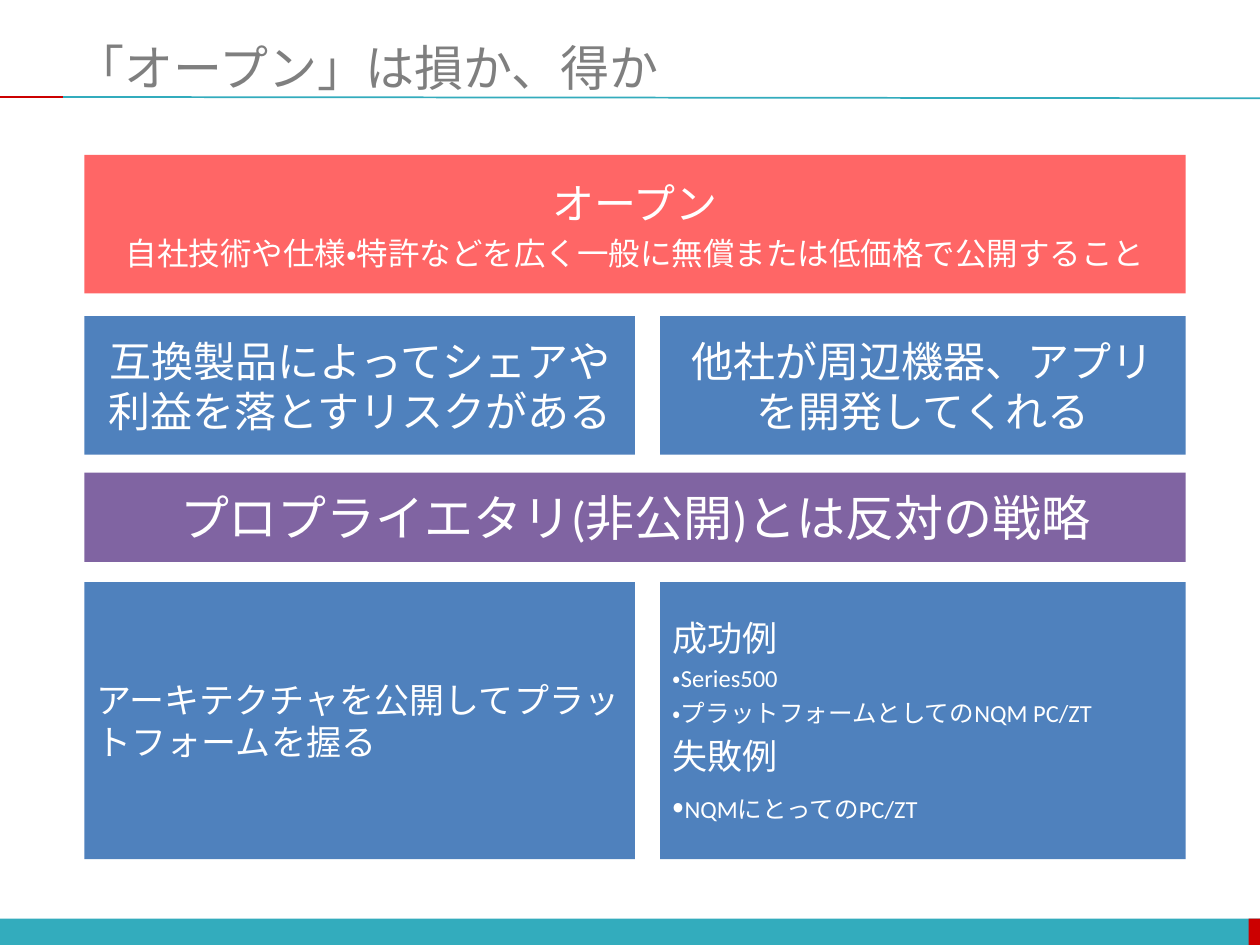
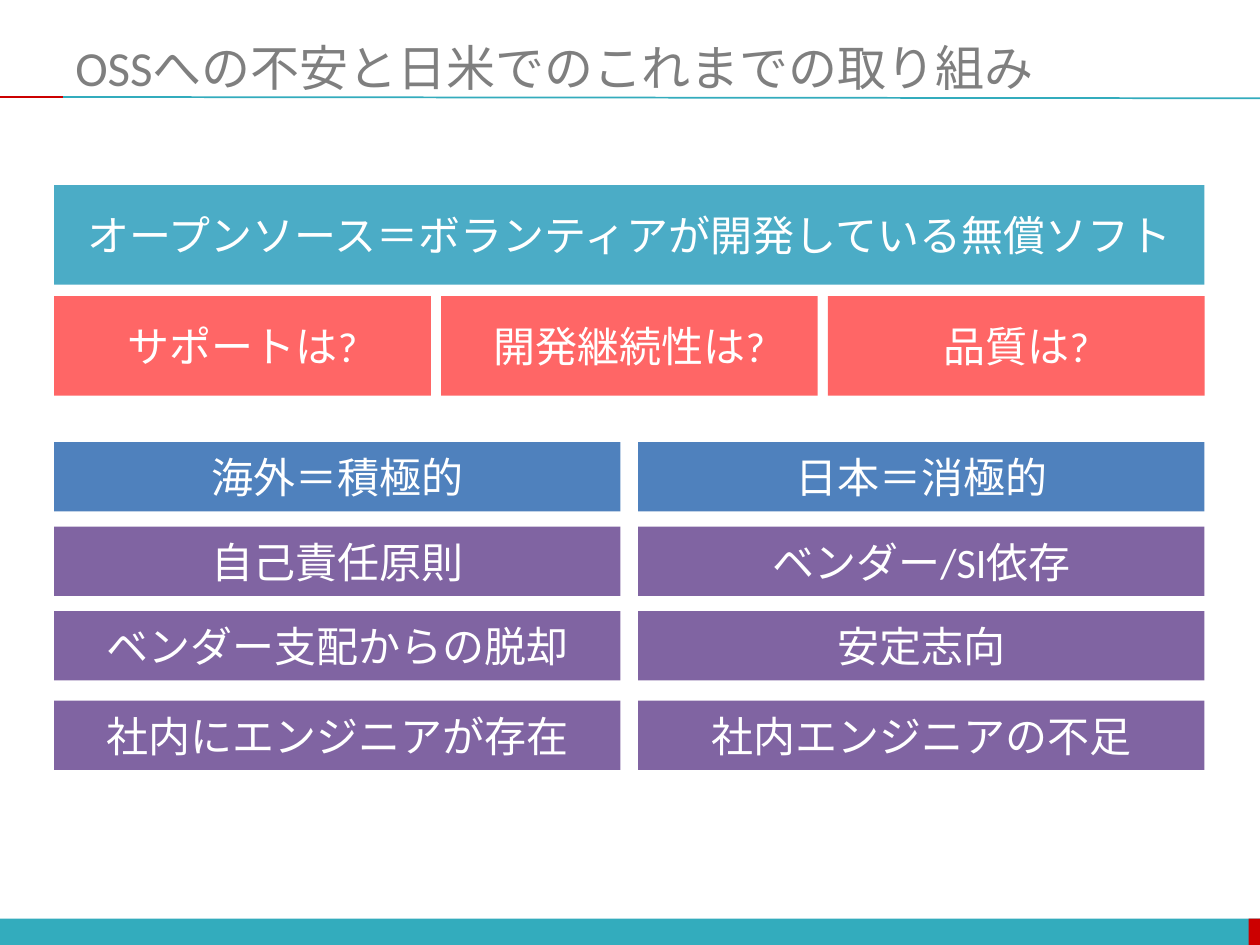
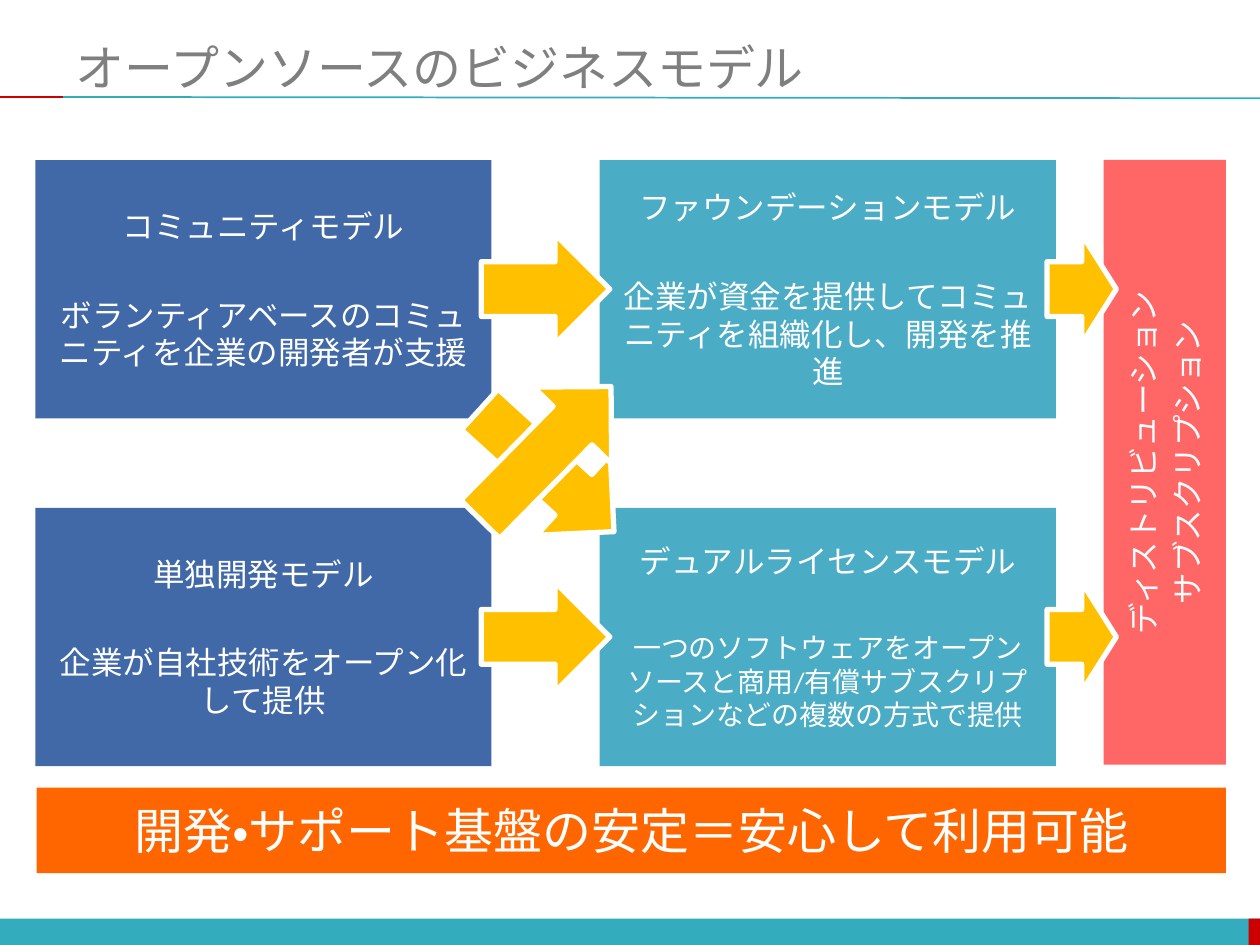
from pptx import Presentation
from pptx.dml.color import RGBColor
from pptx.enum.lang import MSO_LANGUAGE_ID
from pptx.enum.shapes import MSO_CONNECTOR, MSO_SHAPE
from pptx.enum.text import MSO_ANCHOR, PP_ALIGN
from pptx.oxml.ns import qn
from pptx.util import Inches, Pt

RECTANGLE, ARROW = MSO_SHAPE.RECTANGLE, MSO_SHAPE.RIGHT_ARROW
LEFT, CENTER = PP_ALIGN.LEFT, PP_ALIGN.CENTER
MIDDLE = MSO_ANCHOR.MIDDLE
JAPANESE = MSO_LANGUAGE_ID.JAPANESE
STRAIGHT = MSO_CONNECTOR.STRAIGHT

WIDTH, HEIGHT = 10, 7.5
FONT, BANNER_FONT = "Calibri", "Noto Sans CJK JP"
COLORS = {
    "teal": "33ACBD", "red": "CC0000", "title": "7F7F7F", "white": "FFFFFF",
    "blue": "4F81BD", "navy": "4168A7", "aqua": "4BACC6", "purple": "8064A2",
    "coral": "FF6666", "orange": "FF6600", "gold": "FFC000",
}

# Content: a paragraph is a list of (text, size) runs
OPEN_TITLE = "「オープン」は損か、得か"
OPEN_DEFINITION = [
    [("オープン", 24)],
    [("自社技術や仕様・特許などを広く一般に無償または低価格で公開すること", 18)],
]
OPEN_EFFECTS = [
    "互換製品によってシェアや利益を落とすリスクがある",
    "他社が周辺機器、アプリを開発してくれる",
]
OPEN_STRATEGY = "プロプライエタリ(非公開)とは反対の戦略"
OPEN_AIM = [[("アーキテクチャを公開してプラットフォームを握る", 20)]]
OPEN_EXAMPLES = [
    [("成功例", 20)],
    [("・Series500", 14)],
    [("・プラットフォームとしてのNQM PC/ZT", 14)],
    [("失敗例", 20)],
    [("・", 20), ("NQMにとってのPC/ZT", 14)],
]

WORRY_TITLE = "OSSへの不安と日米でのこれまでの取り組み"
WORRY_BANNER = "オープンソース＝ボランティアが開発している無償ソフト"
WORRIES = ["サポートは?", "開発継続性は?", "品質は?"]
ATTITUDES = [  # top, colour, abroad, Japan
    (3.51, "blue", "海外＝積極的", "日本＝消極的"),
    (4.18, "purple", "自己責任原則", "ベンダー/SI依存"),
    (4.85, "purple", "ベンダー支配からの脱却", "安定志向"),
    (5.56, "purple", "社内にエンジニアが存在", "社内エンジニアの不足"),
]

MODEL_TITLE = "オープンソースのビジネスモデル"
MODELS = [  # column, row, colour, name, description, description size
    (0, 0, "navy", "コミュニティモデル",
     "ボランティアベースのコミュニティを企業の開発者が支援", 18),
    (1, 0, "aqua", "ファウンデーションモデル",
     "企業が資金を提供してコミュニティを組織化し、開発を推進", 18),
    (0, 1, "navy", "単独開発モデル", "企業が自社技術をオープン化して提供", 18),
    (1, 1, "aqua", "デュアルライセンスモデル",
     "一つのソフトウェアをオープンソースと商用/有償サブスクリプションなどの複数の方式で提供", 16),
]
SERVICES = [[("ディストリビューション", 18)], [("サブスクリプション", 18)]]
MODEL_BANNER = "開発・サポート基盤の安定＝安心して利用可能"


def color(name):
    return RGBColor.from_string(COLORS[name])


def write(box, paragraphs, align=CENTER, ink="white", font=FONT, gap=None):
    """Fill a box; later paragraphs get a gap, by default 20% of their size."""
    frame = box.text_frame
    frame.word_wrap = True
    frame.vertical_anchor = MIDDLE
    for index, runs in enumerate(paragraphs):
        para = frame.add_paragraph() if index else frame.paragraphs[0]
        para.alignment = align
        if index:
            para.space_before = Pt(gap or 0.2 * runs[0][1])
        for text, size in runs:
            span = para.add_run()
            span.text = text
            span.font.size = Pt(size)
            span.font.name = font
            span.font.language_id = JAPANESE
            span.font.color.rgb = color(ink)


def add_block(page, place, fill, paragraphs=(), kind=RECTANGLE, **style):
    block = page.shapes.add_shape(kind, *map(Inches, place))
    block.shadow.inherit = False
    block.fill.solid()
    block.fill.fore_color.rgb = color(fill)
    block.line.fill.background()
    write(block, paragraphs, **style)
    return block


def add_arrow(page, place, angle=0):
    arrow = add_block(page, place, "gold", kind=ARROW)
    arrow.line.color.rgb = color("white")
    arrow.line.width = Pt(3)
    arrow.rotation = angle


def add_rule(page, start, end, ink):
    rule = page.shapes.add_connector(STRAIGHT, *map(Inches, start + end))
    rule.line.color.rgb = color(ink)
    rule.line.width = Pt(1)
    properties = rule._element.spPr
    properties.append(properties.makeelement(qn("a:effectLst"), {}))


def add_page(deck, title):
    page = deck.slides.add_slide(deck.slide_layouts[6])
    # Footer band and title rule
    add_block(page, (0, 7.29, WIDTH, 0.22), "teal")
    add_block(page, (9.91, 7.29, 0.1, 0.22), "red")
    add_rule(page, (0.5, 0.77), (WIDTH, 0.78), "teal")
    add_rule(page, (0, 0.77), (0.5, 0.77), "red")
    box = page.shapes.add_textbox(*map(Inches, (0.5, 0.3, 9.5, 0.46)))
    write(box, [[(title, 28)]], align=LEFT, ink="title")
    return page


def build_open(deck):
    page = add_page(deck, OPEN_TITLE)
    left, full = 0.67, 8.74
    columns = [(left, 4.37), (5.24, 4.17)]
    add_block(page, (left, 1.23, full, 1.1), "coral", OPEN_DEFINITION)
    for (x, width), effect in zip(columns, OPEN_EFFECTS):
        add_block(page, (x, 2.51, width, 1.1), "blue", [[(effect, 24)]])
    add_block(page, (left, 3.75, full, 0.71), "purple", [[(OPEN_STRATEGY, 28)]])
    for (x, width), paragraphs in zip(columns, [OPEN_AIM, OPEN_EXAMPLES]):
        add_block(page, (x, 4.62, width, 2.2), "blue", paragraphs, align=LEFT)


def build_worries(deck):
    page = add_page(deck, WORRY_TITLE)
    left, full = 0.43, 9.13

    def add_row(top, height, gap, fill, labels):
        width = (full - gap * (len(labels) - 1)) / len(labels)
        for index, label in enumerate(labels):
            x = left + index * (width + gap)
            add_block(page, (x, top, width, height), fill, [[(label, 24)]])

    add_row(1.47, 0.79, 0, "aqua", [WORRY_BANNER])
    add_row(2.35, 0.79, 0.08, "coral", WORRIES)
    for top, fill, *labels in ATTITUDES:
        add_row(top, 0.55, 0.14, fill, labels)


def build_models(deck):
    page = add_page(deck, MODEL_TITLE)
    column_lefts, row_tops = (0.28, 4.76), (1.27, 4.03)
    card_width, card_height, arrow_height = 3.62, 2.05, 0.87
    # Model cards and the services they lead to
    for column, row, fill, name, description, size in MODELS:
        place = (column_lefts[column], row_tops[row], card_width, card_height)
        add_block(page, place, fill, [[(name, 18)], [(description, size)]], gap=29)
    services = add_block(page, (8.76, row_tops[0], 0.97, 4.8), "coral", SERVICES)
    services._element.txBody.bodyPr.set("vert", "vert270")
    # Arrows along each row, then the crossing pair
    for top in row_tops:
        y = top + (card_height - arrow_height) / 2
        add_arrow(page, (3.82, y, 1.02, arrow_height))
        add_arrow(page, (8.31, y, 0.55, arrow_height))
    add_arrow(page, (3.62, 3.3, 1.44, arrow_height), 42.3)
    add_arrow(page, (3.59, 3.16, 1.48, arrow_height), 314.6)
    add_block(page, (0.29, 6.25, 9.44, 0.68), "orange", [[(MODEL_BANNER, 28)]],
              font=BANNER_FONT)


def main():
    deck = Presentation()
    deck.slide_width, deck.slide_height = Inches(WIDTH), Inches(HEIGHT)
    build_open(deck)
    build_worries(deck)
    build_models(deck)
    deck.save("out.pptx")


if __name__ == "__main__":
    main()
